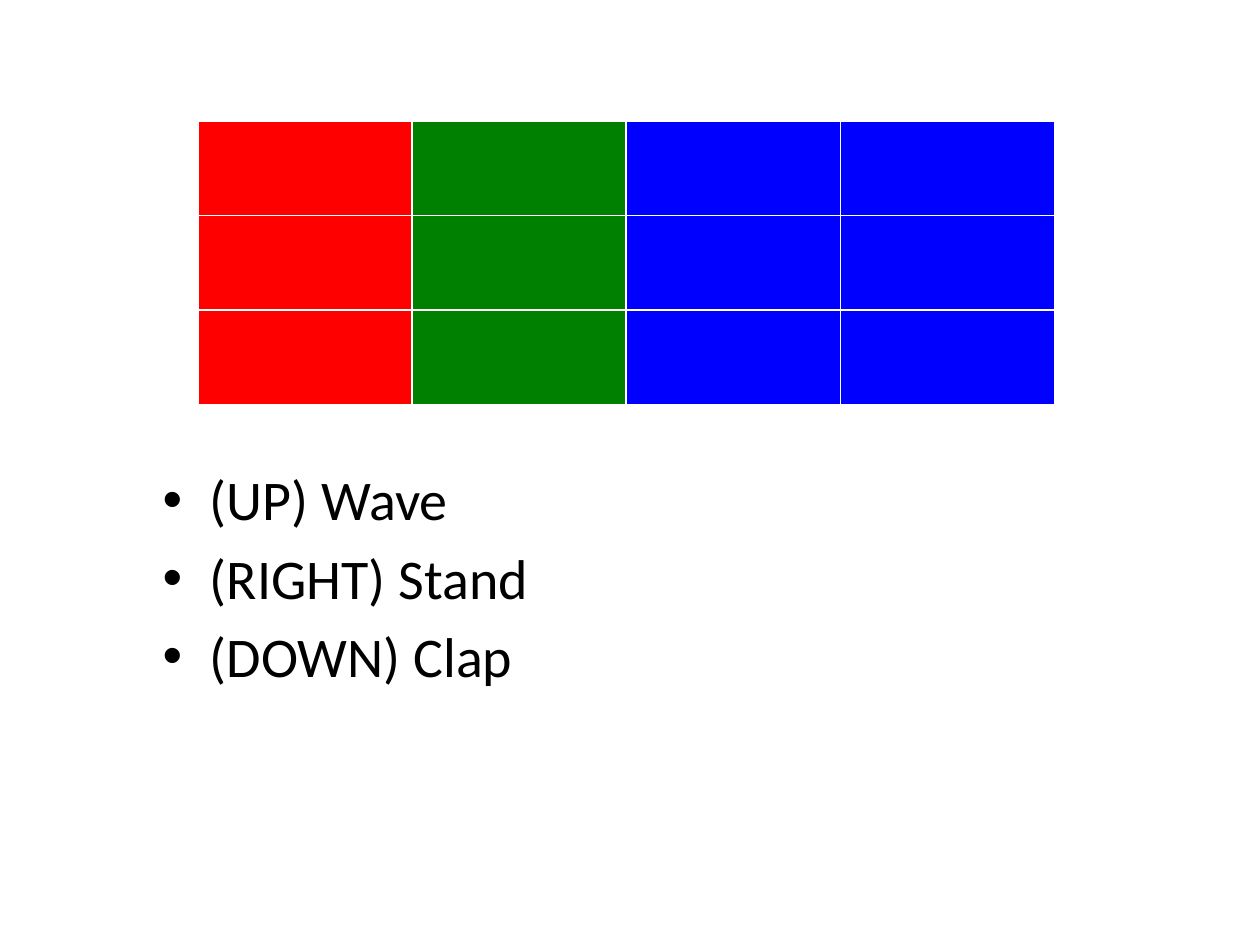
from pptx import Presentation
from pptx.dml.color import RGBColor
from pptx.util import Inches, Pt

RED = RGBColor(0xFF, 0x00, 0x00)
GREEN = RGBColor(0x00, 0x80, 0x00)
BLUE = RGBColor(0x00, 0x00, 0xFF)
BLACK = RGBColor(0x00, 0x00, 0x00)

COLUMN_COLORS = [RED, GREEN, BLUE, BLUE]
ROW_COUNT = 3
COLUMN_WIDTH = Inches(1.7)
ROW_HEIGHT = Inches(0.75)
MOVES = ["(UP) Wave", "(RIGHT) Stand", "(DOWN) Clap"]

prs = Presentation()
prs.slide_width = Inches(10)
prs.slide_height = Inches(7.5)
slide = prs.slides.add_slide(prs.slide_layouts[1])

unused_title = slide.shapes.title.element
unused_title.getparent().remove(unused_title)

# Color grid: the default table style draws the white rules, thicker under the first row
color_grid = slide.shapes.add_table(
    ROW_COUNT, len(COLUMN_COLORS), Inches(1.57), Inches(0.96),
    COLUMN_WIDTH * len(COLUMN_COLORS), ROW_HEIGHT * ROW_COUNT).table
for row in color_grid.rows:
    row.height = ROW_HEIGHT
    for cell, color in zip(row.cells, COLUMN_COLORS):
        cell.fill.solid()
        cell.fill.fore_color.rgb = color

# Moves: bullets, indents and spacing come from the body placeholder
moves = slide.placeholders[1]
moves.left, moves.top = Inches(1.19), Inches(3.64)
moves.width, moves.height = Inches(8.31), Inches(3.06)
moves.text_frame.text = "\n".join(MOVES)
for paragraph in moves.text_frame.paragraphs:
    for run in paragraph.runs:
        run.font.name = "Calibri"
        run.font.size = Pt(32)
        run.font.color.rgb = BLACK

prs.save("out.pptx")
